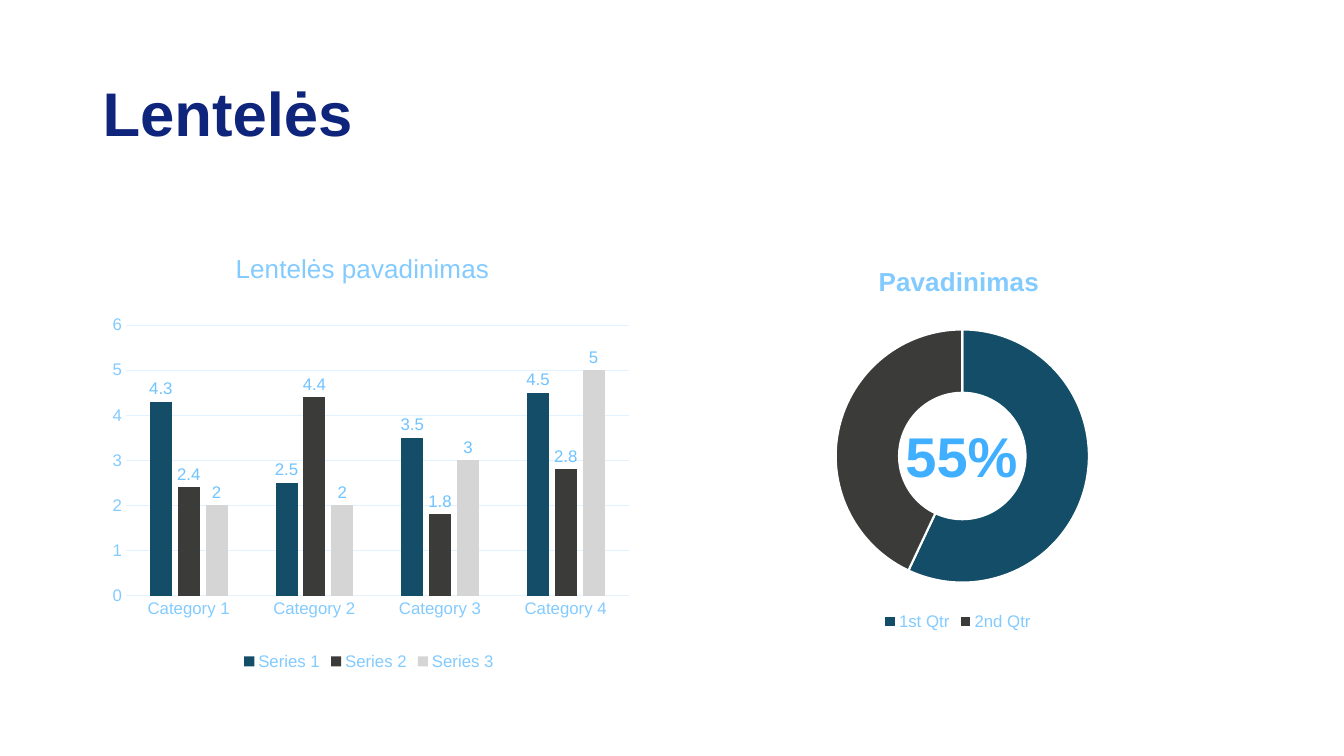
from lxml import etree
from pptx import Presentation
from pptx.chart.data import CategoryChartData
from pptx.dml.color import RGBColor
from pptx.enum.chart import (XL_CHART_TYPE, XL_LABEL_POSITION,
                             XL_LEGEND_POSITION, XL_TICK_MARK)
from pptx.enum.text import MSO_ANCHOR, PP_ALIGN
from pptx.oxml.ns import qn
from pptx.util import Inches, Pt

COLUMNS, DOUGHNUT = XL_CHART_TYPE.COLUMN_CLUSTERED, XL_CHART_TYPE.DOUGHNUT
OUTSIDE, BOTTOM = XL_LABEL_POSITION.OUTSIDE_END, XL_LEGEND_POSITION.BOTTOM
NO_TICK = XL_TICK_MARK.NONE
TOP, LEFT, CENTER = MSO_ANCHOR.TOP, PP_ALIGN.LEFT, PP_ALIGN.CENTER

FONT = "Arial"
COLORS = {"navy": "0F247B", "sky": "40AFFF", "pale": "83CBFF", "label": "70C3FF",
          "grid": "E2F3FF", "teal": "134D67", "charcoal": "3B3C3A",
          "silver": "D5D5D5", "white": "FFFFFF"}
FILLS = ["teal", "charcoal", "silver"]

HEADING = "Lentelės"
SHARE = "55%"
COLUMN_TITLE = "Lentelės pavadinimas"
COLUMN_CATEGORIES = ["Category 1", "Category 2", "Category 3", "Category 4"]
COLUMN_SERIES = {"Series 1": [4.3, 2.5, 3.5, 4.5],
                 "Series 2": [2.4, 4.4, 1.8, 2.8],
                 "Series 3": [2, 2, 3, 5]}
RING_TITLE = "Pavadinimas"
RING_CATEGORIES = ["1st Qtr", "2nd Qtr"]
RING_SERIES = {"Series 1": [57, 43]}

CHART_TOP, CHART_WIDTH, CHART_HEIGHT = 2.36, 5.48, 4.33
COLUMN_LEFT, RING_LEFT = 0.92, 6.75


def color(name):
    return RGBColor.from_string(COLORS[name])


def style(font, size, color_name, bold=False):
    font.name, font.size, font.bold = FONT, Pt(size), bold
    font.color.rgb = color(color_name)


def set_layout(element, index, x, y, size=None):
    """Place a chart part by fractions of the chart; a size means an inner plot area."""
    for old in element.findall(qn("c:layout")):
        element.remove(old)
    layout = etree.Element(qn("c:layout"))
    manual = etree.SubElement(layout, qn("c:manualLayout"))
    settings = [("xMode", "edge"), ("yMode", "edge"), ("x", x), ("y", y)]
    if size:
        settings = [("layoutTarget", "inner"), *settings, ("w", size[0]), ("h", size[1])]
    for tag, value in settings:
        etree.SubElement(manual, qn(f"c:{tag}")).set("val", str(value))
    element.insert(index, layout)


def add_chart(kind, left, title, bold, categories, series, title_at, plot):
    data = CategoryChartData()
    data.categories = categories
    for name, values in series.items():
        data.add_series(name, values)
    chart = slide.shapes.add_chart(kind, Inches(left), Inches(CHART_TOP),
                                   Inches(CHART_WIDTH), Inches(CHART_HEIGHT), data).chart
    style(chart.font, 10, "sky")
    chart.has_title = True
    heading = chart.chart_title.text_frame
    heading.text = title
    style(heading.paragraphs[0].font, 18.6, "pale", bold)
    chart.chart_title.include_in_layout = False
    chart.has_legend = True
    chart.legend.position = BOTTOM
    chart.legend.include_in_layout = False
    style(chart.legend.font, 12, "pale")
    set_layout(chart.chart_title._element, 1, *title_at)
    set_layout(chart._chartSpace.chart.plotArea, 0, *plot)
    return chart


def add_text(text, left, top, width, height, size, color_name, align):
    frame = slide.shapes.add_textbox(Inches(left), Inches(top),
                                     Inches(width), Inches(height)).text_frame
    frame.word_wrap = True
    frame.vertical_anchor = TOP
    paragraph = frame.paragraphs[0]
    paragraph.text, paragraph.alignment = text, align
    style(paragraph.font, size, color_name, bold=True)
    return paragraph


prs = Presentation()
prs.slide_width, prs.slide_height = Inches(13.33), Inches(7.5)
slide = prs.slides.add_slide(prs.slide_layouts[6])

columns = add_chart(COLUMNS, COLUMN_LEFT, COLUMN_TITLE, False, COLUMN_CATEGORIES,
                    COLUMN_SERIES, (0.25, 0.02), (0.06, 0.2, (0.91, 0.62)))
column_plot = columns.plots[0]
column_plot.gap_width, column_plot.overlap = 219, -27
column_plot.vary_by_categories = False
for series, fill in zip(column_plot.series, FILLS):
    series.format.fill.solid()
    series.format.fill.fore_color.rgb = color(fill)
    labels = series.data_labels
    labels.show_value, labels.position = True, OUTSIDE
    style(labels.font, 12, "label")

for axis in (columns.category_axis, columns.value_axis):
    axis.major_tick_mark = axis.minor_tick_mark = NO_TICK
    style(axis.tick_labels.font, 12, "pale")
scale = columns.value_axis
scale.minimum_scale, scale.maximum_scale, scale.major_unit = 0, 6, 1
scale.format.line.fill.background()
for line in (columns.category_axis.format.line, scale.major_gridlines.format.line):
    line.color.rgb, line.width = color("grid"), Pt(0.75)

ring = add_chart(DOUGHNUT, RING_LEFT, RING_TITLE, True, RING_CATEGORIES,
                 RING_SERIES, (0.35, 0.05), (0.28, 0.21, (0.46, 0.58)))
set_layout(ring.legend._element, 1, 0.36, 0.85)
ring_plot = ring.plots[0]
ring_plot._element.find(qn("c:holeSize")).set("val", "61")
for index, fill in enumerate(FILLS[:len(RING_CATEGORIES)]):
    segment = ring_plot.series[0].points[index].format
    segment.fill.solid()
    segment.fill.fore_color.rgb = color(fill)
    segment.line.color.rgb, segment.line.width = color("white"), Pt(1.5)

add_text(SHARE, 8.87, 4.13, 1.33, 0.77, 40, "sky", CENTER)
add_text(HEADING, COLUMN_LEFT, 0.78, 9.77, 1.45, 44, "navy", LEFT).line_spacing = 0.9

prs.save("out.pptx")
